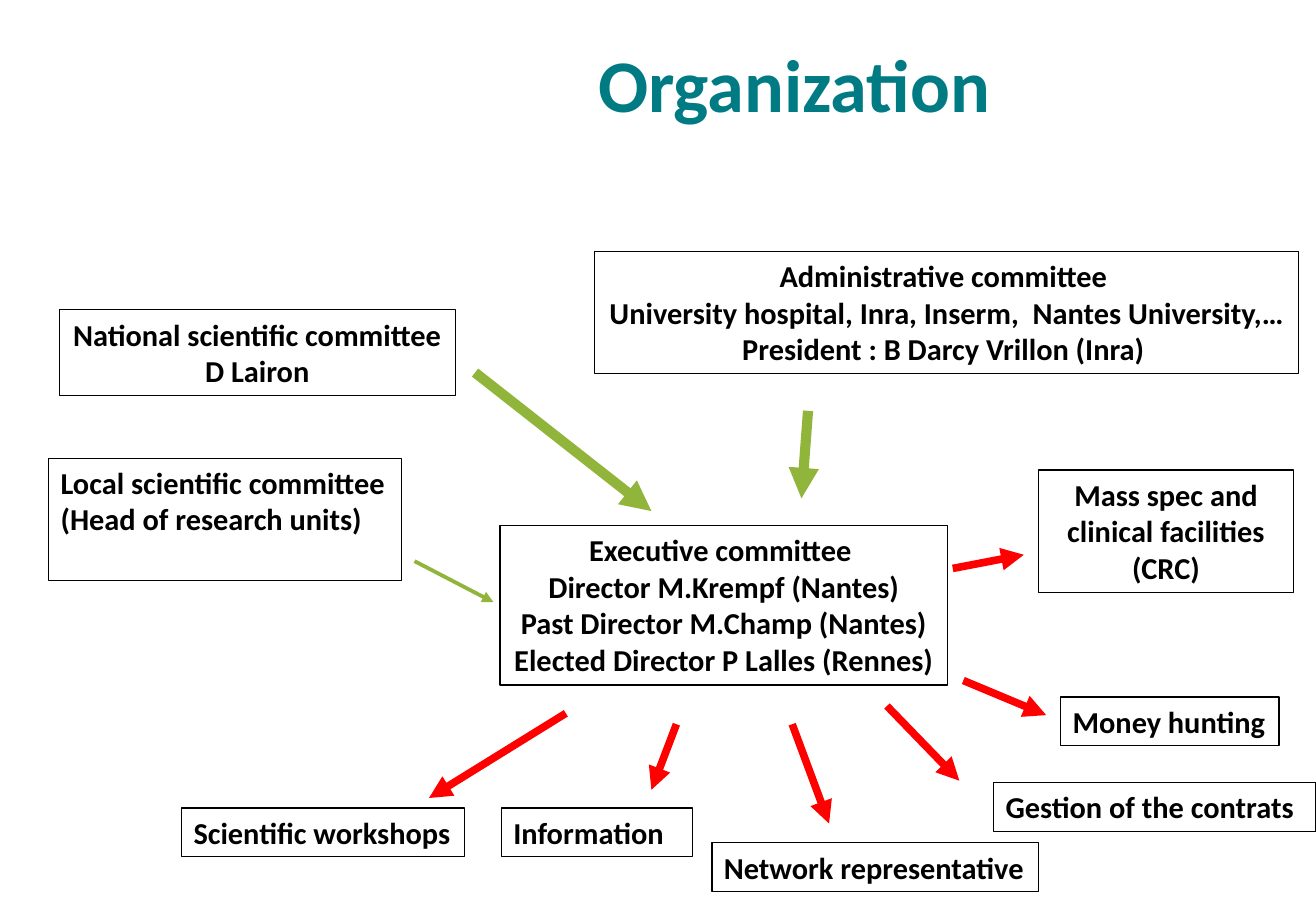
from dataclasses import dataclass

from lxml import etree
from pptx import Presentation
from pptx.dml.color import RGBColor
from pptx.enum.shapes import MSO_CONNECTOR, MSO_SHAPE
from pptx.enum.text import MSO_ANCHOR, PP_ALIGN
from pptx.oxml.ns import qn
from pptx.util import Inches, Pt

TEAL = RGBColor(0x00, 0x7B, 0x84)
GREEN = RGBColor(0x90, 0xB5, 0x3A)
RED = RGBColor(0xFF, 0x00, 0x00)
BLACK = RGBColor(0x00, 0x00, 0x00)
FONT = "Calibri"

# Heights in hundredths of the area: one text line, and the margins of a box
LINE_H = 4.05
MARGIN_H = 1.3

# Left, top, width (hundredths of the area), text lines high, alignment, text
COMMITTEES = [
    (45.2, 27.6, 53.5, 3, PP_ALIGN.CENTER,
     ["Administrative committee ",
      "University hospital, Inra, Inserm,  Nantes University,…",
      "President : B Darcy Vrillon (Inra) "]),
    (38, 57.7, 34, 4, PP_ALIGN.CENTER,
     ["Executive committee ", "Director M.Krempf (Nantes)",
      "Past Director M.Champ (Nantes)",
      "Elected Director P Lalles (Rennes)"]),
    (3.7, 50.3, 26.8, 3, PP_ALIGN.LEFT,
     ["Local scientific committee", "(Head of research units)"]),
    (4.5, 34, 30.1, 2, PP_ALIGN.CENTER,
     ["National scientific committee", "D Lairon"]),
]
TASKS = [
    (13.8, 88.7, 21.5, 1, PP_ALIGN.LEFT, ["Scientific workshops"]),
    (38.1, 88.7, 14.5, 1, PP_ALIGN.LEFT, ["Information"]),
    (54.1, 92.5, 24.8, 1, PP_ALIGN.LEFT, ["Network representative"]),
    (75.5, 85.9, 24.5, 1, PP_ALIGN.LEFT, ["Gestion of the contrats"]),
    (80.6, 76.5, 16.6, 1, PP_ALIGN.LEFT, ["Money hunting"]),
    (78.9, 51.6, 19.4, 3, PP_ALIGN.CENTER,
     ["Mass spec and clinical facilities (CRC)"]),
]

# Start, end (hundredths of the area), line width in points
COMMITTEE_ARROWS = [
    ((61.4, 45.1), (60.9, 54.7), 6),
    ((36.1, 40.9), (49.5, 56.1), 6),
    ((31.5, 61.6), (37.5, 66.1), 2.25),
]
TASK_ARROWS = [
    ((43, 78.3), (32.6, 87.6), 4.5),
    ((51.4, 79.5), (49.5, 86.7), 4.5),
    ((60.2, 79.5), (63, 90.4), 4.5),
    ((67.4, 77.5), (72.9, 85.7), 4.5),
    ((73.2, 74.7), (79.5, 78.5), 4.5),
    ((72.4, 62.4), (77.8, 60.9), 4.5),
]


@dataclass
class Area:
    left: int
    top: int
    width: int
    height: int

    def point(self, x, y):
        w, h = self.size(x, y)
        return self.left + w, self.top + h

    def size(self, w, h):
        return int(self.width * w / 100), int(self.height * h / 100)


def set_font(p, size, color):
    p.font.name = FONT
    p.font.size = Pt(size)
    p.font.bold = True
    p.font.color.rgb = color


def add_title(slide, area, text):
    title = slide.shapes.title
    title.left, title.top = area.point(38.2, 0.7)
    title.width, title.height = area.size(45.6, 16.7)
    tf = title.text_frame
    tf.text = text
    tf.vertical_anchor = MSO_ANCHOR.MIDDLE
    p = tf.paragraphs[0]
    p.alignment = PP_ALIGN.CENTER
    set_font(p, 44, TEAL)


def add_box(slide, area, x, y, width, lines, align, texts):
    sp = slide.shapes.add_shape(
        MSO_SHAPE.RECTANGLE, *area.point(x, y),
        *area.size(width, MARGIN_H + lines * LINE_H))
    sp.shadow.inherit = False
    sp.fill.background()
    sp.line.color.rgb = BLACK
    sp.line.width = Pt(0.75)
    tf = sp.text_frame
    tf.word_wrap = True
    tf.vertical_anchor = MSO_ANCHOR.TOP
    if align == PP_ALIGN.LEFT:
        tf.margin_right = 0
    tf.text = "\n".join(texts)
    for p in tf.paragraphs:
        p.alignment = align
        set_font(p, 18, BLACK)


def add_arrow(slide, area, start, end, width, color):
    line = slide.shapes.add_connector(
        MSO_CONNECTOR.STRAIGHT, *area.point(*start), *area.point(*end))
    line.line.color.rgb = color
    line.line.width = Pt(width)
    etree.SubElement(line.line._get_or_add_ln(), qn("a:tailEnd"),
                     type="triangle")
    etree.SubElement(line._element.spPr, qn("a:effectLst"))


def add_region(slide, area, boxes, arrows, color):
    """Place a group of boxes and its arrows within the area."""
    for box in boxes:
        add_box(slide, area, *box)
    for arrow in arrows:
        add_arrow(slide, area, *arrow, color)


def main():
    prs = Presentation()
    prs.slide_width, prs.slide_height = Inches(10.83), Inches(7.5)
    slide = prs.slides.add_slide(prs.slide_layouts[5])
    area = Area(0, 0, prs.slide_width, prs.slide_height)
    add_title(slide, area, "Organization ")
    add_region(slide, area, COMMITTEES, COMMITTEE_ARROWS, GREEN)
    add_region(slide, area, TASKS, TASK_ARROWS, RED)
    prs.save("out.pptx")


if __name__ == "__main__":
    main()
